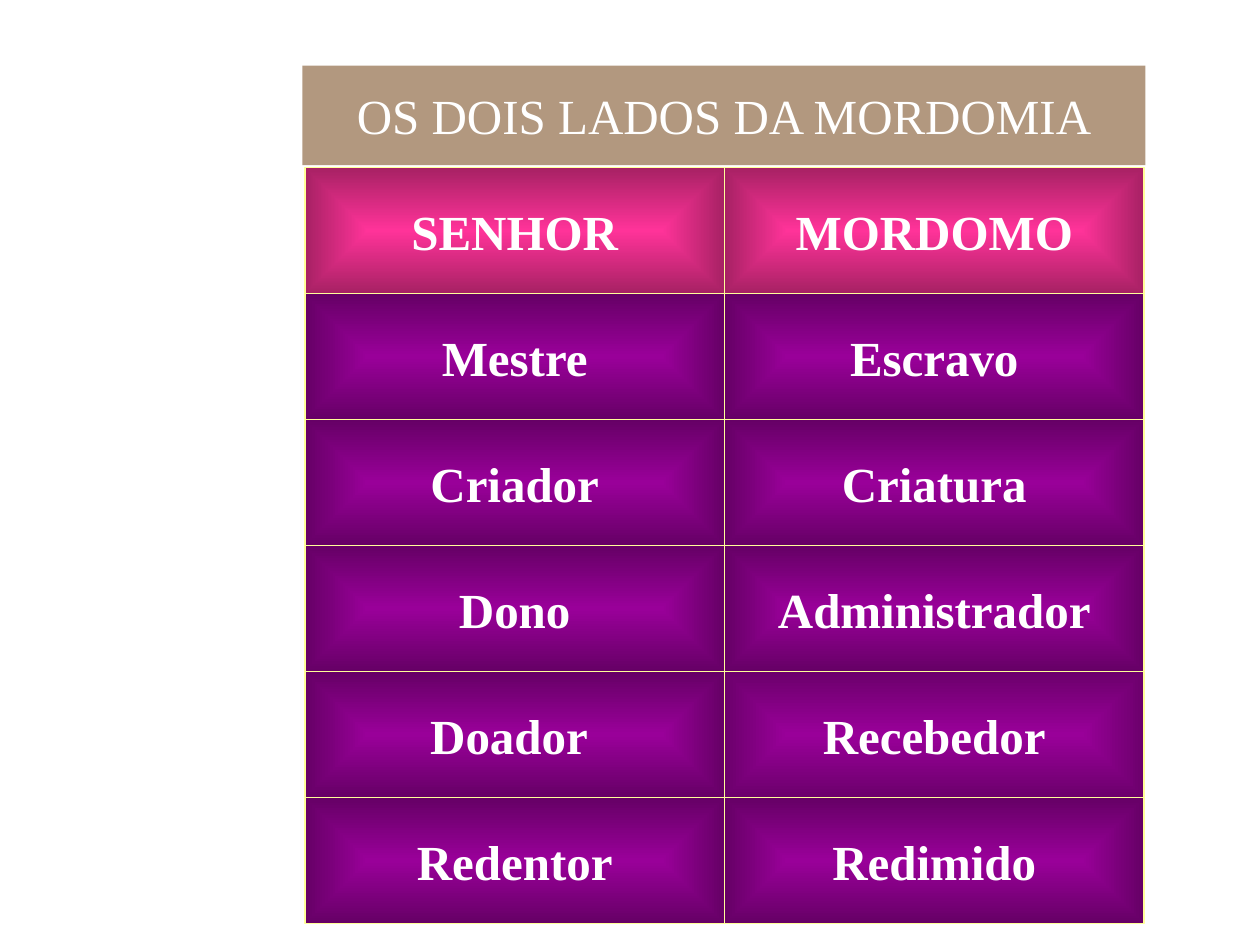
from pptx import Presentation
from pptx.dml.color import RGBColor
from pptx.enum.shapes import MSO_SHAPE
from pptx.enum.text import MSO_ANCHOR, PP_ALIGN
from pptx.oxml import parse_xml
from pptx.oxml.ns import nsdecls, qn
from pptx.util import Inches, Pt

RECTANGLE = MSO_SHAPE.RECTANGLE
MIDDLE = MSO_ANCHOR.MIDDLE
CENTER = PP_ALIGN.CENTER

WHITE = RGBColor(0xFF, 0xFF, 0xFF)
BROWN = RGBColor(0x66, 0x33, 0x00)
PINK = RGBColor(0xFF, 0x33, 0x99)
PURPLE = RGBColor(0x99, 0x00, 0x99)
YELLOW = RGBColor(0xFF, 0xFF, 0x99)

TITLE_ONLY = 5
LEFT, TOP = 2.42, 1.33
CELL_WIDTH, CELL_HEIGHT = 3.33, 1

PAIRS = [
    ("SENHOR", "MORDOMO"),
    ("Mestre", "Escravo"),
    ("Criador", "Criatura"),
    ("Dono", "Administrador"),
    ("Doador ", "Recebedor"),
    ("Redentor", "Redimido"),
]


class SlideBuilder:
    """Holds the text style and the current slide."""

    text_format = {"name": "Times New Roman", "size": Pt(28)}

    def __init__(self, slide):
        self.slide = slide

    def label(self, shape, text, wrap, bold):
        frame = shape.text_frame
        frame.word_wrap = wrap
        frame.vertical_anchor = MIDDLE
        para = frame.paragraphs[0]
        para.alignment = CENTER
        span = para.add_run()
        span.text = text
        for key, value in {**self.text_format, "bold": bold}.items():
            setattr(span.font, key, value)
        span.font.color.rgb = WHITE

    def title(self, text, left, top, width, height):
        box = self.slide.shapes.title
        box.left, box.top = Inches(left), Inches(top)
        box.width, box.height = Inches(width), Inches(height)
        box.fill.solid()
        box.fill.fore_color.rgb = BROWN
        color = box._element.spPr.find(qn("a:solidFill"))[0]
        color.append(parse_xml(f'<a:alpha {nsdecls("a")} val="50000"/>'))
        self.label(box, text, wrap=True, bold=False)

    def glow(self, shape, color, shade):
        """Fill from a bright centre to a shaded rim."""
        shape.fill.gradient()
        properties = shape._element.spPr
        gradient = parse_xml(
            f'<a:gradFill {nsdecls("a")} rotWithShape="1"><a:gsLst>'
            f'<a:gs pos="0"><a:srgbClr val="{color}"/></a:gs>'
            f'<a:gs pos="100000"><a:srgbClr val="{color}">'
            f'<a:shade val="{shade * 1000}"/></a:srgbClr></a:gs></a:gsLst>'
            '<a:path path="shape"><a:fillToRect l="50000" t="50000" '
            'r="50000" b="50000"/></a:path></a:gradFill>')
        properties.replace(properties.find(qn("a:gradFill")), gradient)

    def cell(self, text, row, column, color, shade):
        box = self.slide.shapes.add_shape(
            RECTANGLE,
            Inches(LEFT + column * CELL_WIDTH), Inches(TOP + row * CELL_HEIGHT),
            Inches(CELL_WIDTH), Inches(CELL_HEIGHT))
        box.shadow.inherit = False
        self.glow(box, color, shade)
        box.line.color.rgb = YELLOW
        box.line.width = Pt(0.75)
        self.label(box, text, wrap=False, bold=True)


def main():
    deck = Presentation()
    deck.slide_width, deck.slide_height = Inches(10), Inches(7.5)
    page = SlideBuilder(deck.slides.add_slide(deck.slide_layouts[TITLE_ONLY]))

    # Title band
    page.title("OS DOIS LADOS DA MORDOMIA", 2.4, 0.52, 6.69, 0.79)

    # Grid of pairs: pink heading row, purple rows below
    for row, pair in enumerate(PAIRS):
        color, shade = (PURPLE, 40) if row else (PINK, 38)
        for column, text in enumerate(pair):
            rim = 45 if text == "Recebedor" else shade
            page.cell(text, row, column, color, rim)

    deck.save("out.pptx")


if __name__ == "__main__":
    main()
